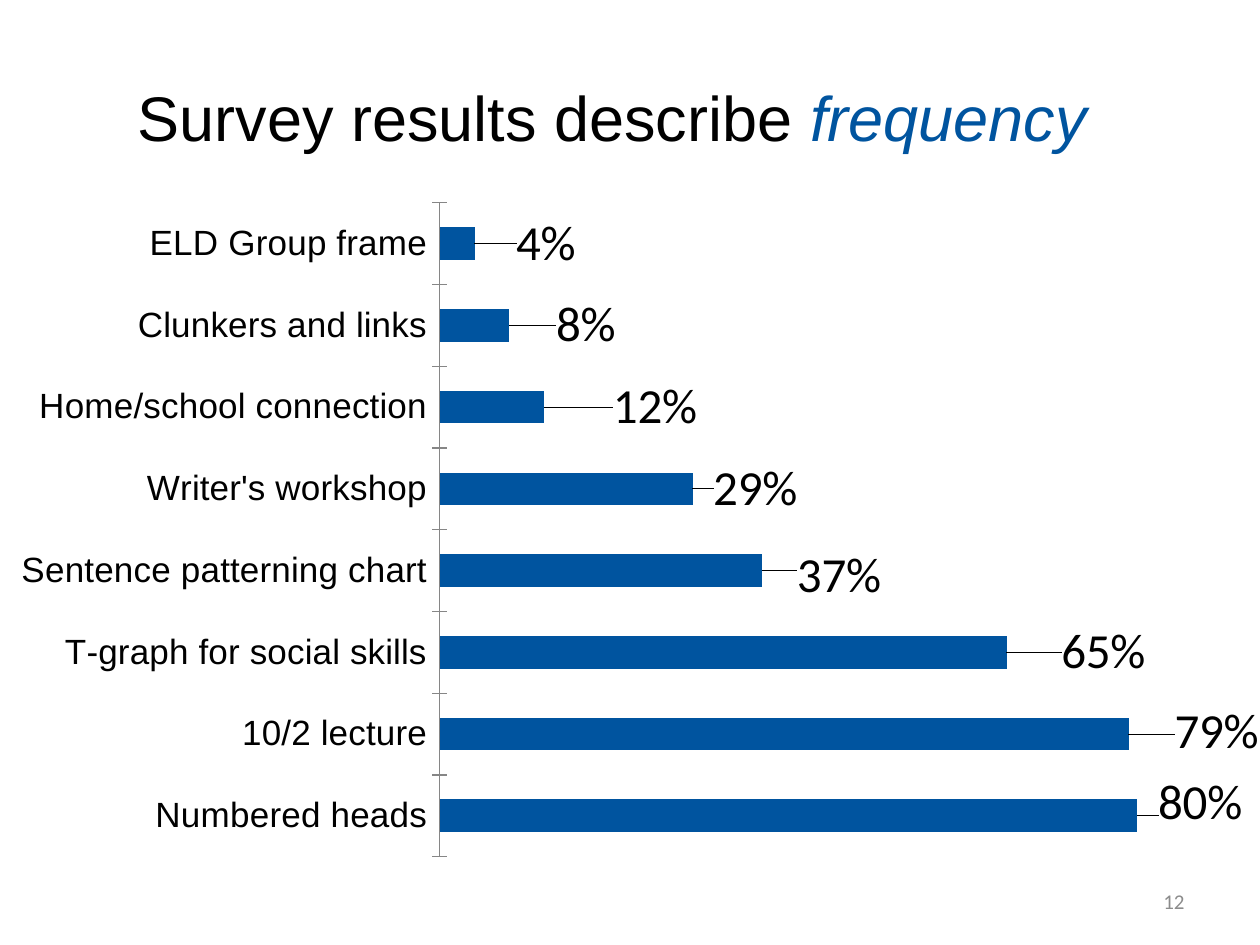
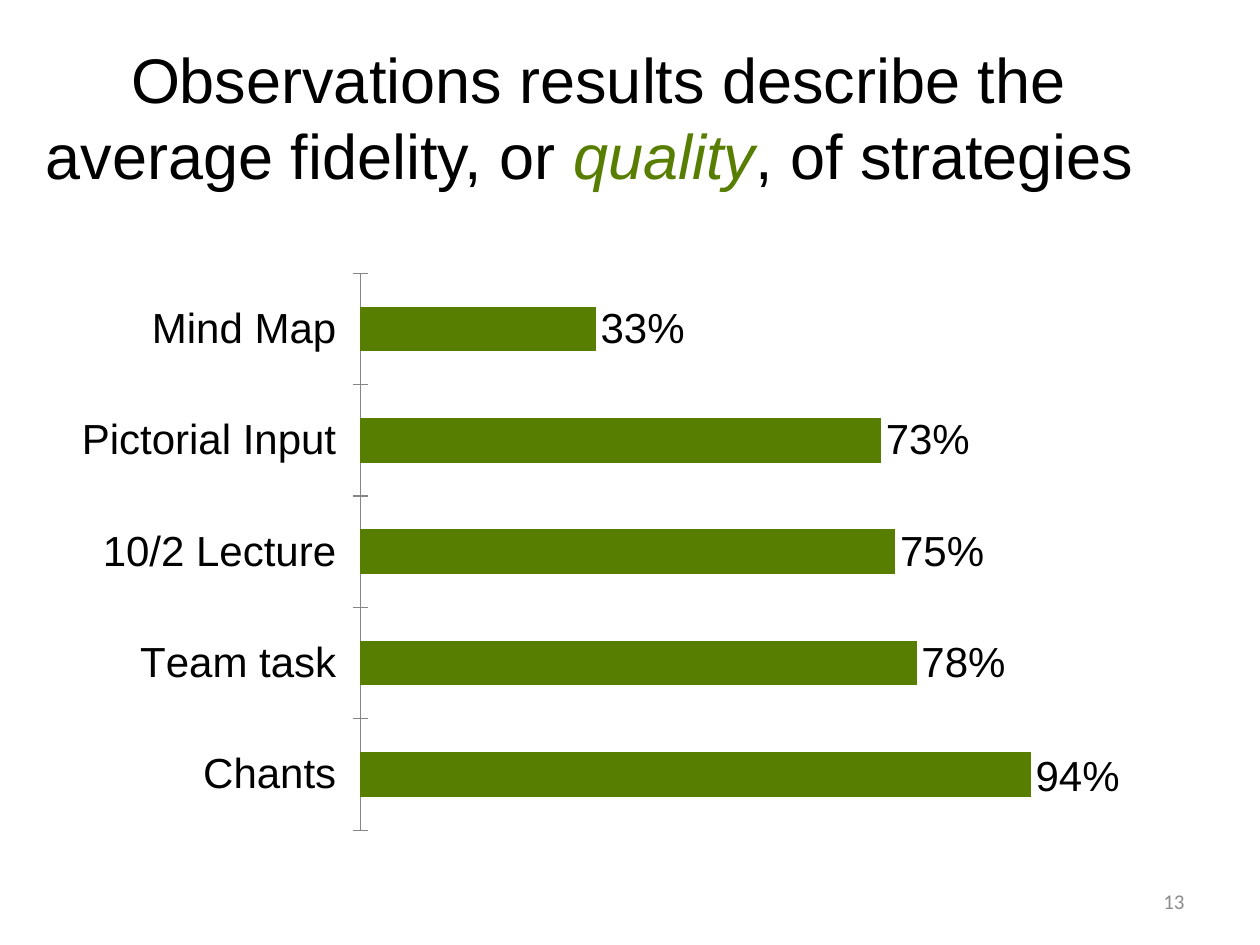
"""Build two slides of survey and observation results as horizontal bar charts."""
from lxml.etree import SubElement
from pptx import Presentation
from pptx.chart.data import CategoryChartData
from pptx.dml.color import RGBColor
from pptx.enum.chart import XL_CHART_TYPE as ChartType
from pptx.enum.chart import XL_LABEL_POSITION as LabelPosition
from pptx.enum.chart import XL_TICK_MARK as TickMark
from pptx.enum.text import MSO_ANCHOR as Anchor
from pptx.enum.text import PP_ALIGN as Align
from pptx.oxml import parse_xml
from pptx.oxml.ns import nsdecls, qn
from pptx.util import Inches, Pt

COLORS = {"text": "000000", "blue": "00549F", "green": "577E00",
          "number": "8C8C8C", "axis": "868686"}

# Rows run from the bottom bar up: category, value, label shift in inches.
SLIDES = [
    {
        "title": [("Survey results describe ", "text"), ("frequency", "blue")],
        "title_box": (0.5, 0.3, 9, 1.25),
        "title_right_inset": 0.38,
        "number": "12",
        "chart_type": ChartType.BAR_STACKED,
        "chart_box": (0, 1.5, 10, 5.42),
        "plot_box": (3.49, 1.61, 6.23, 5.19),
        "axis_maximum": 0.9,
        "color": "blue",
        "category_size": 20,
        "label_font": ("Calibri", 28),
        "label_position": LabelPosition.INSIDE_END,
        "rows": [
            ("Numbered heads", 0.80, (0.87, -0.1)),
            ("10/2 lecture", 0.79, (1.07, -0.02)),
            ("T-graph for social skills", 0.65, (1.14, 0)),
            ("Sentence patterning chart", 0.37, (0.98, 0.04)),
            ("Writer's workshop", 0.29, (0.87, 0)),
            ("Home/school connection", 0.12, (1.25, 0)),
            ("Clunkers and links", 0.08, (0.88, 0)),
            ("ELD Group frame", 0.04, (0.84, 0)),
        ],
    },
    {
        "title": [
            ("Observations results describe the average fidelity, or ", "text"),
            ("quality", "green"), (", of strategies ", "text")],
        "title_box": (0, 0.3, 9.5, 1.25),
        "title_right_inset": 0.1,
        "number": "13",
        "chart_type": ChartType.BAR_CLUSTERED,
        "chart_box": (0.42, 1.92, 8.58, 4.92),
        "plot_box": (2.86, 2.17, 5.66, 4.42),
        "axis_maximum": 1,
        "color": "green",
        "category_size": 24,
        "label_font": ("Arial", 24),
        "label_position": LabelPosition.OUTSIDE_END,
        "rows": [
            ("Chants ", 0.94, (0, 0.02)),
            ("Team task ", 0.78, None),
            ("10/2 Lecture ", 0.75, None),
            ("Pictorial Input ", 0.73, None),
            ("Mind Map ", 0.33, None),
        ],
    },
]
NUMBER_BOX = (7.17, 6.95, 2.33, 0.4)


def rgb(name):
    return RGBColor.from_string(COLORS[name])


def format_font(font, name, size, color="text"):
    font.name, font.size = name, Pt(size)
    font.color.rgb = rgb(color)


def add_text(slide, runs, box, font="Arial", size=36, align=Align.CENTER,
             right_inset=0.1):
    shape = slide.shapes.add_textbox(*map(Inches, box))
    frame = shape.text_frame
    frame.word_wrap = True
    frame.vertical_anchor = Anchor.MIDDLE
    frame.margin_right = Inches(right_inset)
    paragraph = frame.paragraphs[0]
    paragraph.alignment = align
    for text, color in runs:
        run = paragraph.add_run()
        run.text = text
        format_font(run.font, font, size, color)
        run.font.italic = color in ("blue", "green")


def manual_layout(**settings):
    layout = parse_xml(f"<c:layout {nsdecls('c')}><c:manualLayout/></c:layout>")
    for name, value in settings.items():
        SubElement(layout[0], qn(f"c:{name}")).set("val", str(value))
    return layout


def place_plot(chart, chart_box, plot_box):
    left, top, width, height = chart_box
    plot_left, plot_top, plot_width, plot_height = plot_box
    area = chart.element.xpath("c:chart/c:plotArea")[0]
    for layout in area.findall(qn("c:layout")):
        area.remove(layout)
    area.insert(0, manual_layout(
        layoutTarget="inner", xMode="edge", yMode="edge",
        x=(plot_left - left) / width, y=(plot_top - top) / height,
        w=plot_width / width, h=plot_height / height))


def format_labels(chart, content):
    plot = chart.plots[0]
    plot.has_data_labels = True
    series = plot.series[0]
    labels = series.data_labels
    labels.show_value = True
    labels.number_format = "0%"
    labels.number_format_is_linked = False
    labels.position = content["label_position"]
    format_font(labels.font, *content["label_font"])

    width, height = content["chart_box"][2:]
    shifts = [shift for *_, shift in content["rows"]]
    for index, shift in enumerate(shifts):
        if shift is None:
            continue
        label = series.points[index].data_label
        format_font(label.font, *content["label_font"])
        label.position = content["label_position"]
        element = chart.element.xpath(f"//c:dLbl[c:idx/@val='{index}']")[0]
        element.insert(1, manual_layout(x=shift[0] / width, y=shift[1] / height))


def add_bar_chart(slide, content):
    categories, values, _ = zip(*content["rows"])
    data = CategoryChartData(number_format="0%")
    data.categories = categories
    data.add_series("Series 1", values)
    chart = slide.shapes.add_chart(
        content["chart_type"], *map(Inches, content["chart_box"]), data).chart
    chart.has_legend = chart.has_title = False
    format_font(chart.font, content["label_font"][0], 10)

    plot = chart.plots[0]
    plot.vary_by_categories = False
    plot.gap_width = 150
    fill = plot.series[0].format.fill
    fill.solid()
    fill.fore_color.rgb = rgb(content["color"])

    category_axis, value_axis = chart.category_axis, chart.value_axis
    category_axis.major_tick_mark = TickMark.CROSS
    category_axis.format.line.color.rgb = rgb("axis")
    format_font(category_axis.tick_labels.font, "Arial", content["category_size"])
    value_axis.minimum_scale = 0
    value_axis.maximum_scale = content["axis_maximum"]
    value_axis.has_major_gridlines = False
    value_axis.visible = False

    place_plot(chart, content["chart_box"], content["plot_box"])
    format_labels(chart, content)


def main():
    presentation = Presentation()
    presentation.slide_width, presentation.slide_height = Inches(10), Inches(7.5)
    for content in SLIDES:
        slide = presentation.slides.add_slide(presentation.slide_layouts[6])
        add_text(slide, content["title"], content["title_box"],
                 right_inset=content["title_right_inset"])
        add_text(slide, [(content["number"], "number")], NUMBER_BOX,
                 font="Calibri", size=12, align=Align.RIGHT)
        add_bar_chart(slide, content)
    presentation.save("out.pptx")


if __name__ == "__main__":
    main()
